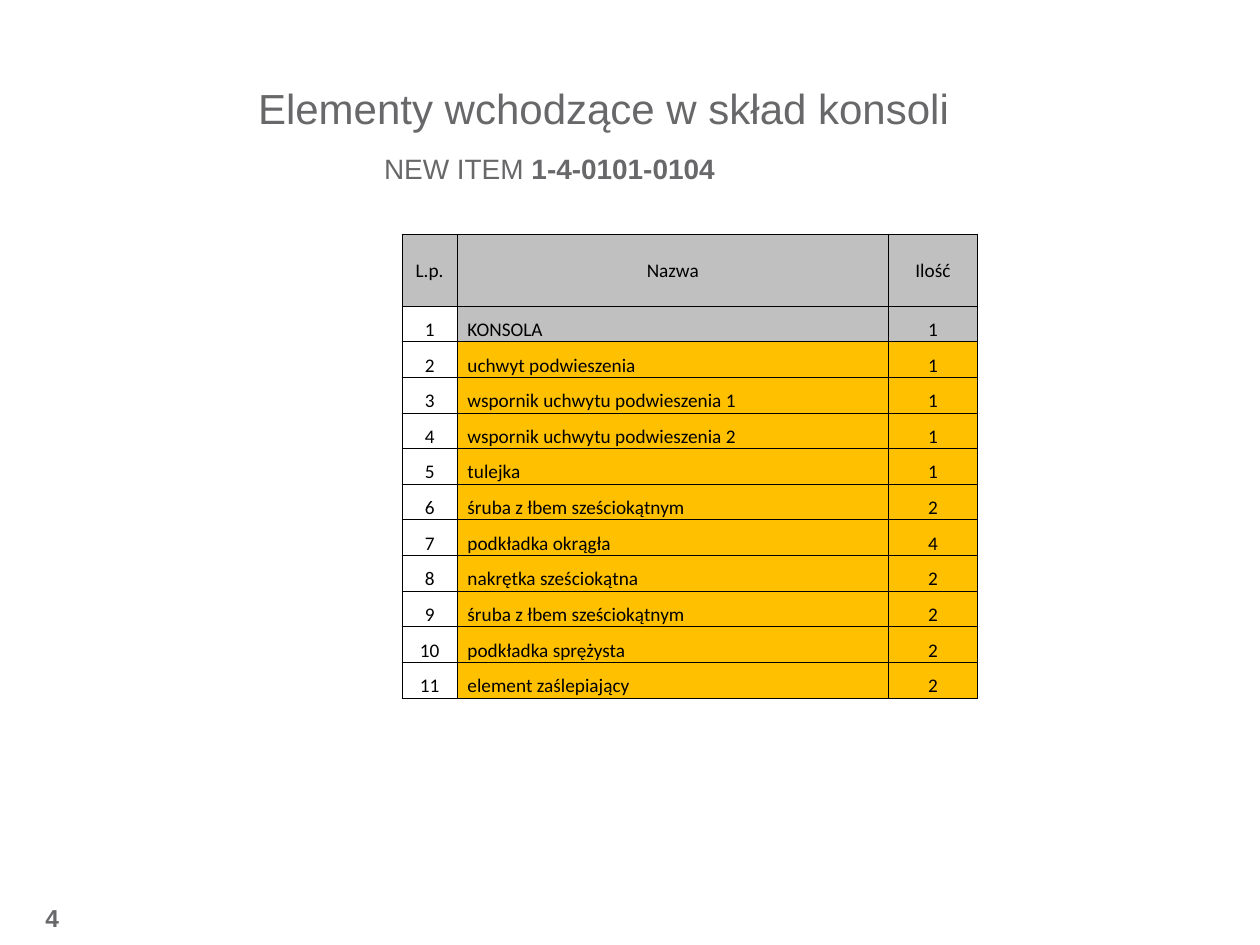
from dataclasses import dataclass

from lxml import etree
from pptx import Presentation
from pptx.dml.color import RGBColor
from pptx.enum import text as t
from pptx.oxml import ns
from pptx.util import Inches, Pt


@dataclass(frozen=True)
class Theme:
    sans: str = "Arial"
    cell: str = "Calibri"
    grey: str = "68686A"
    black: str = "000000"
    head: str = "C0C0C0"
    gold: str = "FFC000"
    title: int = 24
    sub: int = 16
    page: int = 14
    small: int = 11


THEME = Theme()
MID, LOW = t.MSO_ANCHOR.MIDDLE, t.MSO_ANCHOR.BOTTOM
LEFT, CENTER = t.PP_ALIGN.LEFT, t.PP_ALIGN.CENTER

HEADS = ("L.p.", "Nazwa", "Ilość")
PARTS = (
    ("KONSOLA", 1),
    ("uchwyt podwieszenia", 1),
    ("wspornik uchwytu podwieszenia 1", 1),
    ("wspornik uchwytu podwieszenia 2", 1),
    ("tulejka", 1),
    ("śruba z łbem sześciokątnym", 2),
    ("podkładka okrągła", 4),
    ("nakrętka sześciokątna", 2),
    ("śruba z łbem sześciokątnym", 2),
    ("podkładka sprężysta", 2),
    ("element zaślepiający", 2),
)
COLS = (0.44, 3.42, 0.71)
TALL, HEIGHT = 0.57, 3.68


def assign(obj, **values):
    for name, value in values.items():
        setattr(obj, name, value)


def place(shape, left, top, width, height):
    assign(shape, left=Inches(left), top=Inches(top),
           width=Inches(width), height=Inches(height))


def write(frame, runs, size, font=THEME.sans, color=THEME.grey, align=LEFT):
    """Fill the first paragraph with (text, bold) runs."""
    para = frame.paragraphs[0]
    para.alignment = align
    for words, bold in runs:
        run = para.add_run()
        run.text = words
        assign(run.font, name=font, size=Pt(size), bold=bold)
        run.font.color.rgb = RGBColor.from_string(color)


def add_text(slide, box, runs, size, align=LEFT, anchor=t.MSO_ANCHOR.TOP):
    shape = slide.shapes.add_textbox(*map(Inches, box))
    assign(shape.text_frame, word_wrap=True, vertical_anchor=anchor)
    write(shape.text_frame, runs, size, align=align)


def add_title(slide, words):
    title = slide.shapes.title
    place(title, 0.83, 0.23, 7.92, 1.25)
    title.text_frame.vertical_anchor = MID
    write(title.text_frame, [(words, False)], THEME.title, align=CENTER)


def add_edges(cell):
    props = cell._tc.get_or_add_tcPr()
    for side in "LRTB":
        line = etree.SubElement(props, ns.qn(f"a:ln{side}"), w=str(Pt(0.5)))
        fill = etree.SubElement(line, ns.qn("a:solidFill"))
        etree.SubElement(fill, ns.qn("a:srgbClr"), val=THEME.black)


def fill_cell(cell, words, color, align, anchor):
    add_edges(cell)
    if color:
        cell.fill.solid()
        cell.fill.fore_color.rgb = RGBColor.from_string(color)
    else:
        cell.fill.background()
    inset = 0.08 if align == LEFT else 0.01
    assign(cell, vertical_anchor=anchor, margin_left=Inches(inset),
           margin_right=Inches(0.01), margin_top=Inches(0.01), margin_bottom=0)
    write(cell.text_frame, [(words, False)], THEME.small,
          THEME.cell, THEME.black, align)


def add_parts(slide):
    count = len(PARTS)
    box = (3.19, 1.86, sum(COLS), HEIGHT)
    table = slide.shapes.add_table(count + 1, len(COLS),
                                   *map(Inches, box)).table
    assign(table, first_row=False, horz_banding=False)
    for col, width in zip(table.columns, COLS):
        col.width = Inches(width)
    for row in table.rows:
        row.height = Inches((HEIGHT - TALL) / count)
    table.rows[0].height = Inches(TALL)

    for col, words in enumerate(HEADS):
        fill_cell(table.cell(0, col), words, THEME.head, CENTER, MID)
    for row, (name, amount) in enumerate(PARTS, 1):
        color = THEME.head if row == 1 else THEME.gold
        cells = ((str(row), None, CENTER), (name, color, LEFT),
                 (str(amount), color, CENTER))
        for col, values in enumerate(cells):
            fill_cell(table.cell(row, col), *values, LOW)


def main():
    deck = Presentation()
    assign(deck, slide_width=Inches(10), slide_height=Inches(7.5))
    slide = deck.slides.add_slide(deck.slide_layouts[5])
    add_text(slide, (0.08, 7.12, 0.67, 0.33), [("4", True)],
             THEME.page, CENTER, MID)
    add_title(slide, "Elementy wchodzące w skład konsoli")
    add_text(slide, (2.95, 1.15, 4.09, 0.39),
             [("NEW ITEM ", False), ("1-4-0101-0104", True)], THEME.sub)
    add_parts(slide)
    deck.save("out.pptx")


if __name__ == "__main__":
    main()
